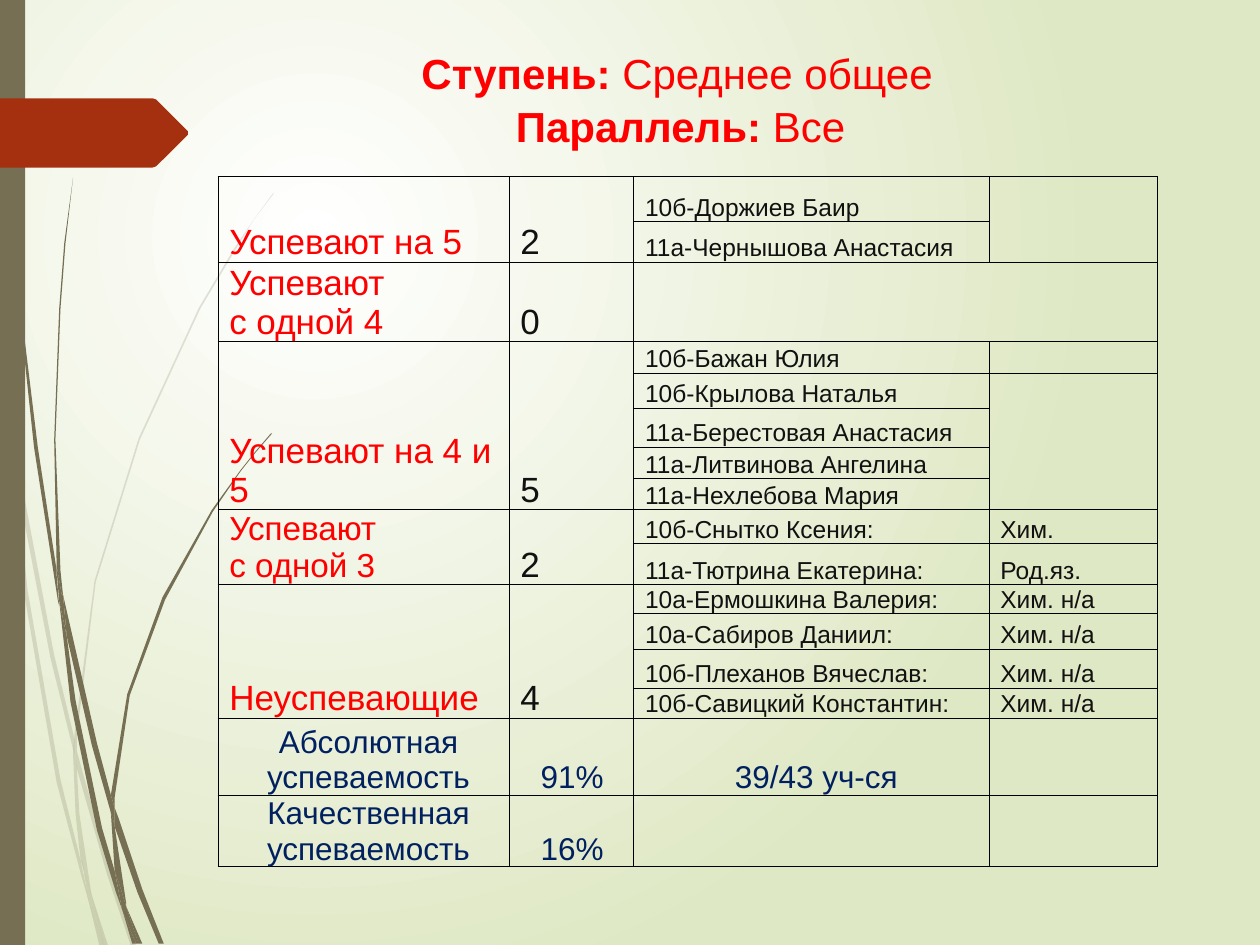
from lxml import etree
from pptx import Presentation
from pptx.dml.color import RGBColor
from pptx.enum.shapes import MSO_SHAPE
from pptx.enum.text import MSO_ANCHOR, MSO_AUTO_SIZE, PP_ALIGN
from pptx.oxml.ns import qn
from pptx.util import Pt

RECT = MSO_SHAPE.RECTANGLE
TOP, BOTTOM = MSO_ANCHOR.TOP, MSO_ANCHOR.BOTTOM
LEFT, CENTER = PP_ALIGN.LEFT, PP_ALIGN.CENTER
RED = RGBColor(0xFF, 0x00, 0x00)
NEAR_BLACK = RGBColor(0x11, 0x11, 0x11)
NAVY = RGBColor(0x00, 0x20, 0x60)
OLIVE = RGBColor(0x76, 0x6F, 0x54)
RUST = RGBColor(0xA5, 0x30, 0x10)
WHITE = RGBColor(0xFF, 0xFF, 0xFF)
PALE_GREEN = RGBColor(0xDF, 0xE8, 0xC4)
PX = 9144  # 100 px to the inch
NO_STYLE = "{2D5ABB26-0587-4C30-8999-92F81FD0307C}"

prs = Presentation()
prs.slide_width, prs.slide_height = 1000 * PX, 750 * PX
s = prs.slides.add_slide(prs.slide_layouts[5])

# Background: radial gradient
fill = s.background.fill
fill.gradient()
for stop, color, position in zip(fill.gradient_stops, (WHITE, PALE_GREEN), (0, 1)):
    stop.color.rgb = color
    stop.position = position
lin = next(s.background._cSld.iter(qn("a:lin")))
radial = etree.Element(qn("a:path"), {"path": "circle"})
etree.SubElement(radial, qn("a:fillToRect"),
                 {"l": "50000", "t": "50000", "r": "100000", "b": "100000"})
lin.getparent().replace(lin, radial)


def outline(points, color, alpha=None):
    """Draw a closed, filled polygon; alpha is in percent."""
    builder = s.shapes.build_freeform(*points[0], scale=PX)
    builder.add_line_segments(points[1:], close=True)
    sp = builder.convert_to_shape()
    sp.shadow.inherit = False
    sp.fill.solid()
    sp.fill.fore_color.rgb = color
    sp.line.fill.background()
    if alpha:
        rgb = next(sp._element.spPr.iter(qn("a:srgbClr")))
        etree.SubElement(rgb, qn("a:alpha"), val=str(alpha * 1000))


# Grass blades
FAINT_BLADES = [
    [(8, 350), (6, 322), (0, 282), (0, 299), (7, 344)],
    [(40, 522), (59, 599), (59, 586), (43, 520), (10, 345), (12, 376)],
    [(64, 607), (61, 596), (61, 610), (85, 694), (104, 751), (108, 751), (88, 692)],
    [(83, 751), (86, 751), (73, 711)],
    [(64, 683), (48, 619), (22, 469), (12, 376), (8, 350), (19, 470), (45, 621),
     (64, 693), (70, 714), (69, 707)],
    [(58, 599), (60, 646), (64, 683), (67, 692), (73, 711), (72, 706), (63, 646),
     (61, 610), (61, 608)],
    [(61, 584), (76, 462), (111, 349), (159, 245), (187, 198), (201, 175), (217, 154),
     (217, 153), (201, 175), (186, 197), (158, 244), (110, 348), (75, 461), (59, 584),
     (59, 586), (61, 596)],
    [(70, 714), (79, 751), (82, 751)],
    [(61, 608), (61, 610), (61, 596), (59, 586), (58, 599)],
    [(67, 692), (65, 683), (69, 707), (70, 714), (82, 751), (83, 751), (73, 711)],
]
DARK_BLADES = [
    [(5, 110), (14, 233), (27, 355), (46, 477), (47, 481), (45, 457), (45, 453),
     (30, 355), (15, 232), (6, 109), (4, 48), (3, 0), (2, 0), (3, 48)],
    [(73, 592), (88, 645), (88, 633), (88, 631), (77, 590), (50, 472), (53, 505)],
    [(94, 649), (91, 641), (91, 656), (109, 708), (126, 749), (130, 749), (113, 706)],
    [(91, 691), (81, 657), (60, 556), (53, 505), (47, 477), (56, 557), (77, 659),
     (92, 708), (97, 722), (96, 717)],
    [(50, 472), (48, 453), (44, 349), (48, 245), (52, 193), (58, 141), (51, 193),
     (47, 245), (43, 349), (45, 449), (49, 472)],
    [(110, 749), (113, 749), (100, 719)],
    [(47, 477), (53, 505), (50, 472), (49, 472), (45, 449), (45, 453)],
    [(91, 633), (103, 552), (131, 476), (169, 406), (191, 374), (203, 359), (216, 344),
     (215, 344), (203, 358), (191, 373), (168, 405), (129, 474), (101, 551), (88, 631),
     (91, 641)],
    [(97, 722), (105, 749), (108, 749)],
    [(88, 645), (91, 691), (96, 706), (100, 719), (100, 716), (91, 656), (90, 651)],
    [(88, 645), (90, 651), (91, 656), (91, 641), (88, 631), (88, 633)],
    [(96, 706), (91, 691), (96, 717), (97, 722), (108, 749), (110, 749), (100, 719)],
]
for blade in FAINT_BLADES:
    outline(blade, OLIVE, 20)
for blade in DARK_BLADES:
    outline(blade, OLIVE)

# Side bar and arrow tag
bar = s.shapes.add_shape(RECT, 0, 0, 20 * PX, 750 * PX)
bar.shadow.inherit = False
bar.fill.solid()
bar.fill.fore_color.rgb = OLIVE
bar.line.fill.background()
outline([(149, 107), (124, 132), (121, 133), (0, 133), (0, 78), (121, 78), (124, 79),
         (149, 104)], RUST)

# Title
title = s.shapes.title
s.shapes._spTree.append(title._element)
for name, value in dict(left=199, top=31, width=721, height=140).items():
    setattr(title, name, value * PX)
tf = title.text_frame
tf.word_wrap, tf.auto_size, tf.vertical_anchor = True, MSO_AUTO_SIZE.NONE, TOP
p = tf.paragraphs[0]
p.alignment, p.line_spacing = CENTER, 1.05
for i, (label, value) in enumerate([("Ступень:", " Среднее общее\t"),
                                    ("Параллель:", " Все\t")]):
    if i:
        p.add_line_break()
    for text, bold in ((label, True), (value, False)):
        r = p.add_run()
        r.text = text
        for name, val in dict(name="Arial", size=Pt(24), bold=bold).items():
            setattr(r.font, name, val)
        r.font.color.rgb = RED

# Table: each group is (label, label size, count, rows of pupil and subject)
GROUPS = [
    ("Успевают на 5", 20, "2 ", [("10б-Доржиев Баир", ""),
                                 ("11а-Чернышова Анастасия", "")]),
    ("Успевают\nс одной 4", 20, "0 ", [("", "")]),
    ("Успевают на 4 и 5", 20, "5 ", [("10б-Бажан Юлия", ""),
                                     ("10б-Крылова Наталья", ""),
                                     ("11а-Берестовая Анастасия", ""),
                                     ("11а-Литвинова Ангелина", ""),
                                     ("11а-Нехлебова Мария", "")]),
    ("Успевают\nс одной 3", 19, "2 ", [("10б-Снытко Ксения:", "Хим."),
                                       ("11а-Тютрина Екатерина:", "Род.яз.")]),
    ("Неуспевающие", 20, "4 ", [("10а-Ермошкина Валерия:", "Хим. н/а"),
                                ("10а-Сабиров Даниил:", "Хим. н/а"),
                                ("10б-Плеханов Вячеслав:", "Хим. н/а"),
                                ("10б-Савицкий Константин:", "Хим. н/а")]),
]
TOTALS = [("Абсолютная успеваемость", "91% ", "39/43 уч-ся"),
          ("Качественная успеваемость", "16% ", "")]
COLS = [231, 99, 282, 134]
ROWS = [36, 32, 63, 25, 28, 31, 23, 23, 27, 32, 23, 28, 31, 24, 61, 57]

frame = s.shapes.add_table(len(ROWS), len(COLS), 173 * PX, 140 * PX,
                           sum(COLS) * PX, sum(ROWS) * PX)
tbl = frame.table
tbl.first_row = tbl.horz_banding = False
next(tbl._tbl.iter(qn("a:tableStyleId"))).text = NO_STYLE
for col, width in zip(tbl.columns, COLS):
    col.width = width * PX
for row, height in zip(tbl.rows, ROWS):
    row.height = height * PX


def write_cell(row, col, text, size, color, align=LEFT, sides="LRTB"):
    cell = tbl.cell(row, col)
    for name, value in dict(margin_left=9, margin_right=1, margin_top=1,
                            margin_bottom=0).items():
        setattr(cell, name, value * PX)
    cell.vertical_anchor = BOTTOM
    p = cell.text_frame.paragraphs[0]
    p.text = text
    p.alignment = align
    for r in p.runs:
        r.font.name, r.font.size = "Arial", Pt(size)
        r.font.color.rgb = color
    if not text:
        p._p.get_or_add_endParaRPr().set("sz", str(size * 100))
    for side in sides:
        ln = etree.SubElement(cell._tc.get_or_add_tcPr(), qn("a:ln" + side), w=str(Pt(0.5)))
        solid = etree.SubElement(ln, qn("a:solidFill"))
        etree.SubElement(solid, qn("a:srgbClr"), val="000000")
    cell.fill.background()


row = 0
for label, size, count, pupils in GROUPS:
    last = len(pupils) - 1
    open_column = not any(subject for _, subject in pupils)
    for i, (pupil, subject) in enumerate(pupils):
        sides = "LRTB"
        if open_column:  # no lines between the empty subject cells
            sides = "LR" + ("T" if i == 0 else "") + ("B" if i == last else "")
        write_cell(row + i, 0, "" if i else label, size if i == 0 else 14, RED)
        write_cell(row + i, 1, "" if i else count, 20 if i == 0 else 14, NEAR_BLACK)
        write_cell(row + i, 2, pupil, 14, NEAR_BLACK)
        write_cell(row + i, 3, subject, 14, NEAR_BLACK, sides=sides)
    if last:
        for col in (0, 1):
            tbl.cell(row, col).merge(tbl.cell(row + last, col))
    else:
        tbl.cell(row, 2).merge(tbl.cell(row, 3))
    row += len(pupils)
for total in TOTALS:
    for col, text in enumerate((*total, "")):
        write_cell(row, col, text, 18, NAVY, CENTER)
    row += 1

prs.save("out.pptx")
